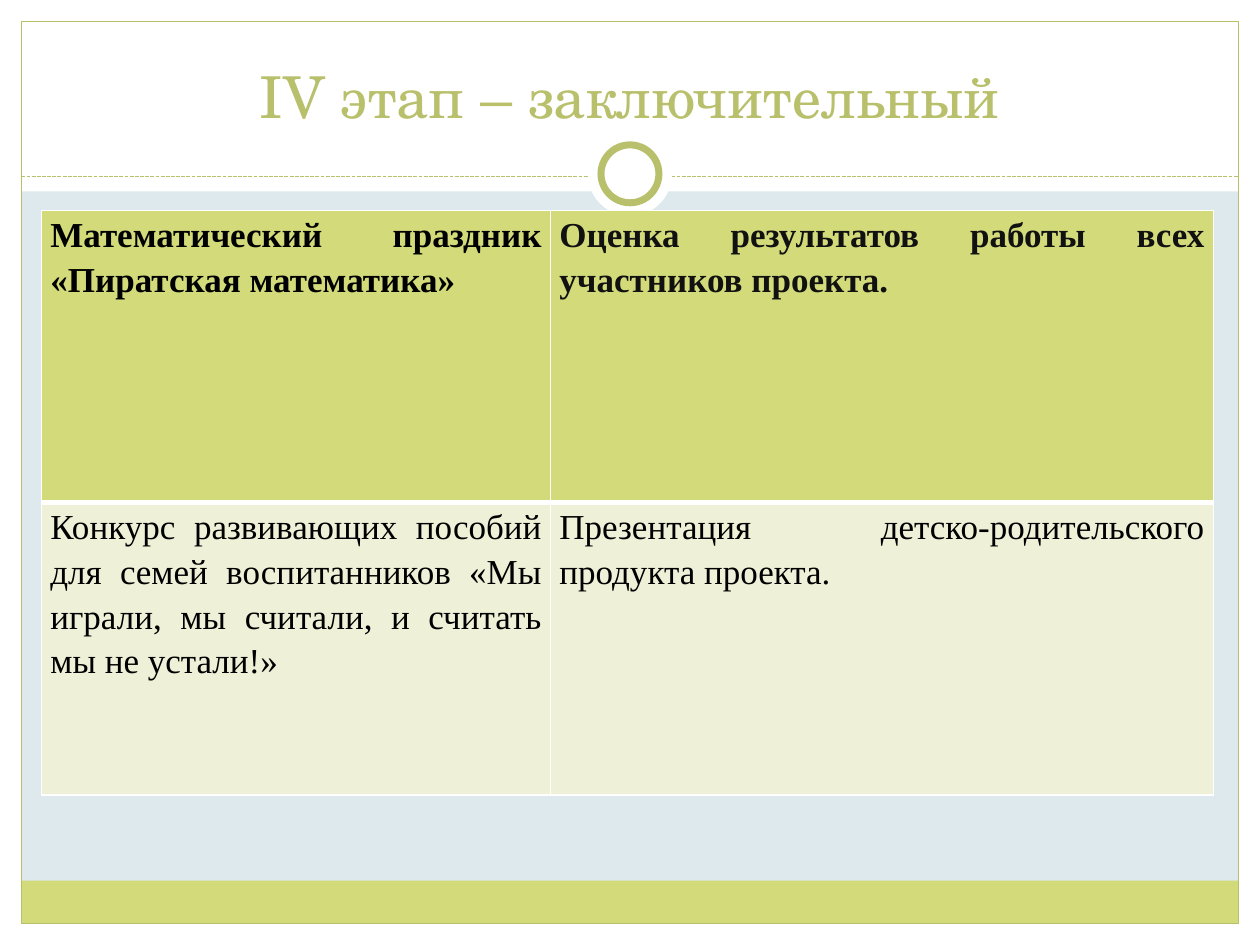
import pptx
import pptx.dml.color
import pptx.enum.dml
import pptx.enum.shapes
import pptx.enum.text
import pptx.oxml
import pptx.oxml.ns
import pptx.util

# Content
TITLE = "IV этап – заключительный"
STAGES = [
    ["Математический праздник «Пиратская математика»",
     "Оценка результатов работы всех участников проекта."],
    ["Конкурс развивающих пособий для семей воспитанников "
     "«Мы играли, мы считали, и считать мы не устали!»",
     "Презентация детско-родительского продукта проекта."],
]
TEXT_COLOURS = [["000000", "111111"], ["000000", "000000"]]
ROW_FILLS = ["D2DA7A", "EEF1D7"]
# Widths of the left, right, top and bottom borders in each row
ROW_BORDERS = [{"L": 1, "R": 1, "T": 1, "B": 3},
               {"L": 1, "R": 1, "T": 3, "B": 1}]

# Layout
WIDTH, HEIGHT = 10, 7.5
MARGIN = 0.17
INNER = WIDTH - 2 * MARGIN
HEADER, RULE_Y, BAND = 1.52, 1.4, 0.34
RING_Y = 1.38
TABLE_LEFT, TABLE_TOP = 0.33, 1.67
COLUMNS, ROW_HEIGHT = [4.04, 5.26], 2.32

WHITE, GREEN, LIME, PALE = "FFFFFF", "B9C06C", "D2DA7A", "DDE9EC"
SHAPES = pptx.enum.shapes.MSO_SHAPE
ALIGN = pptx.enum.text.PP_ALIGN
inch = pptx.util.Inches


def colour(value):
    return pptx.dml.color.RGBColor.from_string(value)


def add_shape(page, kind, left, top, width, height, fill=None, line=None, weight=0.75):
    shape = page.shapes.add_shape(kind, inch(left), inch(top), inch(width), inch(height))
    shape.shadow.inherit = False
    if fill:
        shape.fill.solid()
        shape.fill.fore_color.rgb = colour(fill)
    else:
        shape.fill.background()
    if line:
        shape.line.color.rgb = colour(line)
        shape.line.width = pptx.util.Pt(weight)
    else:
        shape.line.fill.background()


def write(frame, text, *, font, size, ink, align, bold=False, spacing=None):
    frame.word_wrap = True
    para = frame.paragraphs[0]
    para.alignment = align
    if spacing:
        para.line_spacing = spacing
    span = para.add_run()
    span.text = text
    span.font.name = font
    span.font.size = pptx.util.Pt(size)
    span.font.bold = bold
    span.font.color.rgb = colour(ink)


def set_borders(cell, widths):
    properties = cell._tc.get_or_add_tcPr()
    for index, (side, width) in enumerate(widths.items()):
        properties.insert(index, pptx.oxml.parse_xml(
            f'<a:ln{side} {pptx.oxml.ns.nsdecls("a")} w="{pptx.util.Pt(width)}">'
            f'<a:solidFill><a:srgbClr val="{WHITE}"/></a:solidFill></a:ln{side}>'))


def add_backdrop(page):
    page.background.fill.solid()
    page.background.fill.fore_color.rgb = colour(PALE)

    # White edges, footer band and frame
    for edge in [(0, HEIGHT - MARGIN, WIDTH, MARGIN), (0, 0, WIDTH, HEADER),
                 (0, 0, MARGIN, HEIGHT), (WIDTH - MARGIN, 0, MARGIN, HEIGHT)]:
        add_shape(page, SHAPES.RECTANGLE, *edge, fill=WHITE)
    add_shape(page, SHAPES.RECTANGLE, MARGIN, HEIGHT - MARGIN - BAND, INNER, BAND, fill=LIME)
    add_shape(page, SHAPES.RECTANGLE, MARGIN, MARGIN, INNER, HEIGHT - 2 * MARGIN, line=GREEN)

    # Dashed rule under the title
    rule = page.shapes.add_connector(
        pptx.enum.shapes.MSO_CONNECTOR.STRAIGHT,
        inch(MARGIN), inch(RULE_Y), inch(WIDTH - MARGIN), inch(RULE_Y))
    rule.line.color.rgb = colour(GREEN)
    rule.line.width = pptx.util.Pt(0.75)
    rule.line.dash_style = pptx.enum.dml.MSO_LINE.SQUARE_DOT
    rule._element.spPr.append(
        pptx.oxml.parse_xml(f'<a:effectLst {pptx.oxml.ns.nsdecls("a")}/>'))

    # Ring on the rule
    for size, line in [(0.67, None), (0.46, GREEN)]:
        add_shape(page, SHAPES.OVAL, (WIDTH - size) / 2, RING_Y - size / 2, size, size,
                  fill=WHITE, line=line, weight=4)


def add_title(page):
    box = page.shapes.add_textbox(
        inch(TABLE_LEFT), inch(0.25), inch(WIDTH - 2 * TABLE_LEFT), inch(0.83))
    box.text_frame.vertical_anchor = pptx.enum.text.MSO_ANCHOR.BOTTOM
    write(box.text_frame, TITLE, font="TeX Gyre Schola", size=33, ink=GREEN,
          align=ALIGN.CENTER)


def add_stages(page):
    table = page.shapes.add_table(
        len(STAGES), len(COLUMNS), inch(TABLE_LEFT), inch(TABLE_TOP),
        inch(sum(COLUMNS)), inch(ROW_HEIGHT * len(STAGES))).table
    for column, width in zip(table.columns, COLUMNS):
        column.width = inch(width)
    for r, texts in enumerate(STAGES):
        table.rows[r].height = inch(ROW_HEIGHT)
        for c, text in enumerate(texts):
            cell = table.cell(r, c)
            cell.margin_left = cell.margin_right = inch(0.07)
            cell.margin_top = cell.margin_bottom = 0
            cell.fill.solid()
            cell.fill.fore_color.rgb = colour(ROW_FILLS[r])
            set_borders(cell, ROW_BORDERS[r])
            write(cell.text_frame, text, font="Times New Roman", size=20,
                  ink=TEXT_COLOURS[r][c], align=ALIGN.JUSTIFY, bold=r == 0, spacing=1.15)


def main():
    deck = pptx.Presentation()
    deck.slide_width, deck.slide_height = inch(WIDTH), inch(HEIGHT)
    page = deck.slides.add_slide(deck.slide_layouts[6])
    add_backdrop(page)
    add_title(page)
    add_stages(page)
    deck.save("out.pptx")


if __name__ == "__main__":
    main()
